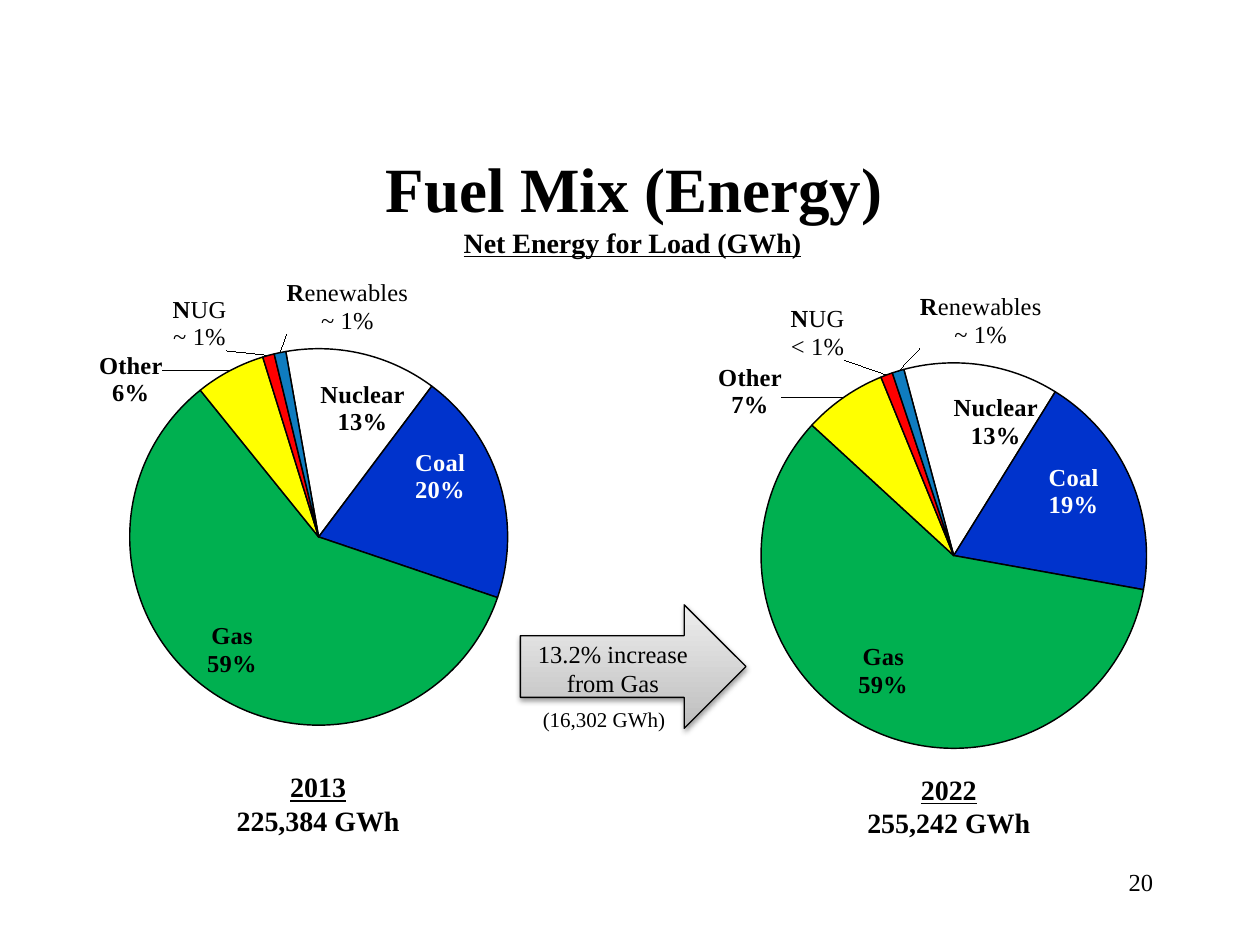
import math
import pptx
import pptx.chart.data
import pptx.dml.color
import pptx.enum.chart
import pptx.enum.shapes
import pptx.enum.text
import pptx.oxml
import pptx.oxml.ns
import pptx.util

FONT = "Times New Roman"
CENTER = pptx.enum.text.PP_ALIGN.CENTER
RIGHT = pptx.enum.text.PP_ALIGN.RIGHT
LABEL_HEIGHT = 0.43

# Fuel: slice colour, label colour, label width in inches
FUELS = {
    "Nuclear": ("FFFFFF", "000000", 0.68),
    "Coal": ("0033CC", "FFFFFF", 0.4),
    "Oil": ("C0C0C0", "000000", 0.42),
    "Gas": ("00B050", "000000", 0.39),
    "Other": ("FFFF00", "000000", 0.5),
    "NUG": ("FF0000", "000000", 0.43),
    "Renewables": ("0F7CBF", "000000", 0.97),
}

# Label centres are given in inches on the slide, in fuel order
PIES = [
    {"frame": (3.96, 2.19, 6.39, 4.15), "center": (7.57, 4.41), "diameter": 3.06,
     "start": 345, "values": (13, 19, 0, 59, 7, 1, 1),
     "small": {"Oil": "< 1%", "NUG": "< 1%", "Renewables": "~ 1%"},
     "labels": [(7.9, 3.41), (8.47, 3.93), (9.4, 4.65), (7.04, 5.27),
                (5.99, 3.16), (6.51, 2.7), (7.8, 2.61)]},
    {"frame": (-1.89, 2.14, 6.99, 3.83), "center": (2.53, 4.27), "diameter": 3.0,
     "start": 350, "values": (13, 20, 0, 59, 6, 1, 1),
     "small": {"Oil": "< 1%", "NUG": "~ 1%", "Renewables": "~ 1%"},
     "labels": [(2.87, 3.31), (3.44, 3.81), (4.36, 4.59), (1.88, 5.12),
                (1.07, 3.07), (1.6, 2.63), (2.77, 2.5)]},
]

YEARS = [("2013", "225,384 GWh", (1.66, 6.06, 1.73, 0.64)),
         ("2022", "255,242 GWh", (6.72, 6.08, 1.62, 0.63))]


def color(value):
    return pptx.dml.color.RGBColor.from_string(value)


def inches(*lengths):
    return [pptx.util.Inches(length) for length in lengths]


def format_font(font, size, bold=False, underline=False, fill="000000"):
    font.name = FONT
    font.size = pptx.util.Pt(size)
    font.bold = bold
    font.underline = underline
    font.color.rgb = color(fill)


def add_text(slide, text, box, size=16, bold=False, underline=False, align=CENTER):
    """Add a text box; only its first paragraph can be underlined."""
    frame = slide.shapes.add_textbox(*inches(*box)).text_frame
    frame.word_wrap = True
    frame.text = text
    for number, paragraph in enumerate(frame.paragraphs):
        paragraph.alignment = align
        format_font(paragraph.font, size, bold, underline and number == 0)


def chart_element(tag, **attributes):
    element = pptx.oxml.parse_xml(
        f'<c:{tag} {pptx.oxml.ns.nsdecls("c")}/>')
    for name, value in attributes.items():
        element.set(name, str(value))
    return element


def manual_layout(**settings):
    layout = chart_element("layout")
    manual = chart_element("manualLayout")
    layout.append(manual)
    for name, value in settings.items():
        manual.append(chart_element(name, val=value))
    return layout


def label_offset(pie, index, width):
    """Share of the chart between the label's outside position and its place."""
    values = pie["values"]
    turn = (sum(values[:index]) + values[index] / 2) / sum(values)
    angle = math.radians(pie["start"]) + 2 * math.pi * turn
    across, up = math.sin(angle), math.cos(angle)
    radius = pie["diameter"] / 2
    x = pie["center"][0] + radius * across + math.copysign(width / 2, across)
    y = pie["center"][1] - radius * up - math.copysign(LABEL_HEIGHT / 2, up)
    target_x, target_y = pie["labels"][index]
    return (round((target_x - x) / pie["frame"][2], 4),
            round((target_y - y) / pie["frame"][3], 4))


def format_label(label, pie, index, fuel):
    _, text_color, width = FUELS[fuel]
    if fuel in pie["small"]:
        frame = label.text_frame
        first = frame.paragraphs[0]
        second = frame.add_paragraph()
        for paragraph, text, bold in ((first, fuel[0], True), (first, fuel[1:], False),
                                      (second, pie["small"][fuel], False)):
            run = paragraph.add_run()
            run.text = text
            format_font(run.font, 14, bold)
    else:
        format_font(label.font, 14, True, fill=text_color)
    element = label._get_or_add_dLbl()
    for tag, shown in (("showVal", 0), ("showCatName", 1), ("showPercent", 1)):
        element.find(pptx.oxml.ns.qn("c:" + tag)).set("val", str(shown))
    separator = chart_element("separator")
    separator.text = "\n"
    element.append(separator)
    x, y = label_offset(pie, index, width)
    element.insert(1, manual_layout(x=x, y=y))


def add_pie(slide, pie):
    data = pptx.chart.data.CategoryChartData()
    data.categories = list(FUELS)
    data.add_series("Net energy", pie["values"])
    chart = slide.shapes.add_chart(pptx.enum.chart.XL_CHART_TYPE.PIE,
                                   *inches(*pie["frame"]), data).chart
    chart.has_legend = False
    chart.has_title = False
    format_font(chart.font, 14, True)
    plot = chart.plots[0]
    plot.vary_by_categories = True
    plot._element.append(chart_element("firstSliceAng", val=pie["start"]))

    # Plot area around the centre of the pie
    left, top, width, height = pie["frame"]
    diameter = pie["diameter"]
    area = chart._chartSpace.chart.plotArea
    for old in area.findall(pptx.oxml.ns.qn("c:layout")):
        area.remove(old)
    area.insert(0, manual_layout(
        layoutTarget="inner", xMode="edge", yMode="edge",
        x=round((pie["center"][0] - diameter / 2 - left) / width, 4),
        y=round((pie["center"][1] - diameter / 2 - top) / height, 4),
        w=round(diameter / width, 4), h=round(diameter / height, 4)))

    # Slices and their labels
    series = plot.series[0]
    format_font(series.data_labels.font, 14, True)
    for index, fuel in enumerate(FUELS):
        point = series.points[index]
        point.format.fill.solid()
        point.format.fill.fore_color.rgb = color(FUELS[fuel][0])
        point.format.line.color.rgb = color("000000")
        point.format.line.width = pptx.util.Pt(0.83)
        format_label(point.data_label, pie, index, fuel)


def add_arrow(slide):
    shape = slide.shapes.add_shape(pptx.enum.shapes.MSO_SHAPE.RIGHT_ARROW,
                                   *inches(4.13, 4.8, 1.79, 0.98))
    shape.fill.gradient()
    shape.fill.gradient_angle = 90
    for stop, value in zip(shape.fill.gradient_stops, ("BDBDBD", "EEEEEE")):
        stop.color.rgb = color(value)
    shape.line.color.rgb = color("000000")
    shape.line.width = pptx.util.Pt(0.75)
    shape.shadow.inherit = False
    effects = shape._element.spPr.find(pptx.oxml.ns.qn("a:effectLst"))
    effects.append(pptx.oxml.parse_xml(
        f'<a:outerShdw {pptx.oxml.ns.nsdecls("a")} blurRad="40000" dist="20000" '
        'dir="5400000" rotWithShape="0"><a:srgbClr val="000000">'
        '<a:alpha val="38000"/></a:srgbClr></a:outerShdw>'))


def main():
    presentation = pptx.Presentation()
    presentation.slide_width, presentation.slide_height = inches(10, 7.5)
    slide = presentation.slides.add_slide(presentation.slide_layouts[5])

    # Heading
    title = slide.shapes.title
    title.left, title.top, title.width, title.height = inches(0.54, 1, 8.99, 0.97)
    title.text_frame.text = "Fuel Mix (Energy)"
    title.text_frame.vertical_anchor = pptx.enum.text.MSO_ANCHOR.MIDDLE
    title.text_frame.paragraphs[0].alignment = CENTER
    format_font(title.text_frame.paragraphs[0].font, 36, True)
    add_text(slide, "Net Energy for Load (GWh)", (2.88, 1.74, 4.28, 0.37),
             bold=True, underline=True)

    # Pies with the totals below them
    for pie in PIES:
        add_pie(slide, pie)
    for year, total, box in YEARS:
        add_text(slide, f"{year}\n{total}", box, bold=True, underline=True)

    # Increase between the years
    add_arrow(slide)
    add_text(slide, "(16,302 GWh)", (4.21, 5.56, 1.27, 0.3), size=12, align=None)
    add_text(slide, "13.2% increase\vfrom Gas", (4.05, 5.02, 1.63, 0.57), size=14)

    # Page number
    add_text(slide, "20", (7.17, 6.83, 2.08, 0.5), size=14, align=RIGHT)
    presentation.save("out.pptx")


if __name__ == "__main__":
    main()
